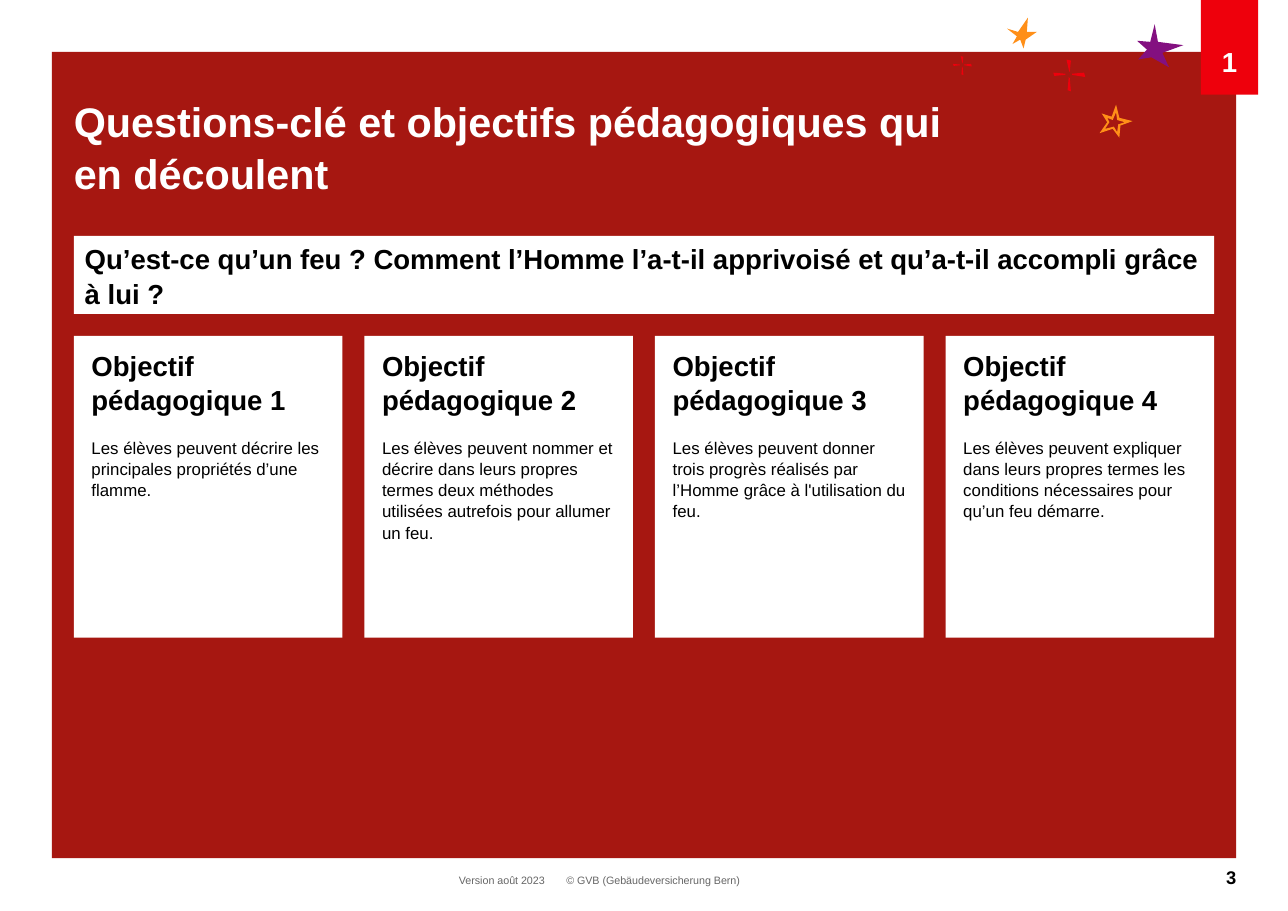
from dataclasses import dataclass

import pptx
import pptx.dml.color
import pptx.enum.shapes
import pptx.enum.text
import pptx.slide
import pptx.util

Align = pptx.enum.text.PP_ALIGN
Anchor = pptx.enum.text.MSO_ANCHOR
Points = list[tuple[float, float]]

# The page is a grid of square cells; every length below counts cells.
COLUMNS, ROWS = 1169, 827
CELL = pptx.util.Inches(0.01)


@dataclass(frozen=True)
class Theme:
    font: str = "Arial"
    frame: str = "A61711"
    red: str = "EE000C"
    purple: str = "831080"
    orange: str = "FF8F18"
    white: str = "FFFFFF"
    black: str = "000000"
    grey: str = "666666"
    title: int = 27
    heading: int = 18
    number: int = 12
    body: int = 11
    footer: int = 7
    heading_gap: float = 13.2
    line_spacing: float = 1.05


THEME = Theme()


@dataclass(frozen=True)
class Area:
    left: float
    top: float
    width: float
    height: float


@dataclass(frozen=True)
class Block:
    """A text area, filled if it has a fill; insets are left, top, right, bottom."""
    area: Area
    texts: tuple[str, ...]
    sizes: tuple[int, ...]
    color: str
    fill: str | None = None
    bold: bool = True
    align: Align = Align.LEFT
    anchor: Anchor = Anchor.TOP
    insets: tuple[int, int, int, int] = (0, 0, 0, 0)
    wrap: bool = True


@dataclass(frozen=True)
class Star:
    color: str
    contours: tuple[Points, ...]


@dataclass(frozen=True)
class Spark:
    column: float
    row: float
    scale: float


FRAME = Area(47, 47, 1075, 732)
CONTENT_LEFT, CONTENT_WIDTH = 67, 1035
CARD_TOP, CARD_HEIGHT, CARD_GAP = 305, 274, 20

OBJECTIVES = (
    "Les élèves peuvent décrire les principales propriétés d’une flamme.",
    "Les élèves peuvent nommer et décrire dans leurs propres termes deux méthodes "
    "utilisées autrefois pour allumer un feu.",
    "Les élèves peuvent donner trois progrès réalisés par l’Homme grâce à "
    "l'utilisation du feu.",
    "Les élèves peuvent expliquer dans leurs propres termes les conditions "
    "nécessaires pour qu’un feu démarre.",
)
CARD_WIDTH = (CONTENT_WIDTH - CARD_GAP * (len(OBJECTIVES) - 1)) / len(OBJECTIVES)

BLOCKS = (
    Block(Area(514, 793, 162, 12), ("© GVB (Gebäudeversicherung Bern)",),
          (THEME.footer,), THEME.grey, bold=False, wrap=False),
    Block(Area(413, 793, 85, 13), ("Version août 2023",), (THEME.footer,),
          THEME.grey, bold=False, align=Align.CENTER, wrap=False),
    Block(Area(1051, 785, 71, 17), ("3",), (THEME.number,), THEME.black,
          align=Align.RIGHT),
    Block(Area(1090, 0, 52, 86), ("1",), (THEME.heading,), THEME.white,
          fill=THEME.red, align=Align.CENTER, anchor=Anchor.BOTTOM,
          insets=(0, 40, 0, 15)),
    Block(Area(CONTENT_LEFT, 85, 807, 92),
          ("Questions-clé et objectifs pédagogiques qui en découlent",),
          (THEME.title,), THEME.white),
    Block(Area(CONTENT_LEFT, 214, CONTENT_WIDTH, 71),
          ("Qu’est-ce qu’un feu ? Comment l’Homme l’a-t-il apprivoisé et "
           "qu’a-t-il accompli grâce à lui ?",),
          (THEME.heading,), THEME.black, fill=THEME.white, anchor=Anchor.MIDDLE,
          insets=(10, 5, 10, 5)),
)

STARS = (
    Star(THEME.purple, ([
        (1044, 38), (1032, 37), (1041, 45), (1033, 54), (1045, 52), (1061, 61),
        (1055, 48), (1074, 41), (1051, 38), (1048, 22)],)),
    Star(THEME.orange, ([
        (919, 40), (926, 36), (929, 44), (931, 36), (941, 29), (932, 29),
        (933, 16), (924, 29), (914, 26), (923, 33)],)),
    Star(THEME.orange, (
        [(1016, 125), (1010, 117), (998, 121), (1005, 111), (1000, 103),
         (1009, 106), (1013, 95), (1016, 107), (1028, 110), (1017, 114)],
        [(1011, 115), (1014, 120), (1015, 113), (1021, 111), (1014, 109),
         (1013, 102), (1010, 109), (1005, 107), (1007, 111), (1003, 117)])),
)

SPARKS = (Spark(970.5, 68.5, 1), Spark(873.5, 59.5, 0.59))
SPARK_ARMS: tuple[Points, ...] = (
    [(0, -3.5), (-2.5, -14.5), (1.5, -13.5), (0.5, -3.5)],
    [(0.5, 2.5), (1.5, 14.5), (-1.5, 13.5), (-0.5, 1.5)],
    [(2.5, -1.5), (13.5, -2.5), (14.5, 1.5), (2.5, -0.5)],
    [(-3.5, -0.5), (-13.5, 0.5), (-14.5, -2.5), (-3.5, -1.5)],
)


def cells(count: float) -> int:
    return round(count * CELL)


def rgb(color: str) -> pptx.dml.color.RGBColor:
    return pptx.dml.color.RGBColor.from_string(color)


def paint(shape, color: str) -> None:
    shape.shadow.inherit = False
    shape.fill.solid()
    shape.fill.fore_color.rgb = rgb(color)
    shape.line.fill.background()


def add_area(page: pptx.slide.Slide, area: Area, fill: str | None):
    """Add a filled rectangle, or a text box when there is no fill."""
    place = [cells(n) for n in (area.left, area.top, area.width, area.height)]
    if fill is None:
        return page.shapes.add_textbox(*place)
    box = page.shapes.add_shape(pptx.enum.shapes.MSO_SHAPE.RECTANGLE, *place)
    paint(box, fill)
    return box


def add_outline(page: pptx.slide.Slide, contours: tuple[Points, ...], color: str) -> None:
    """Fill the contours as one shape; a contour inside another is a hole."""
    scaled = [[(cells(x), cells(y)) for x, y in points] for points in contours]
    builder = page.shapes.build_freeform(*scaled[0][0], scale=1.0)
    for index, points in enumerate(scaled):
        if index:
            builder.move_to(*points[0])
        builder.add_line_segments(points[1:], close=True)
    paint(builder.convert_to_shape(), color)


def add_spark(page: pptx.slide.Slide, spark: Spark) -> None:
    for arm in SPARK_ARMS:
        points = [(spark.column + x * spark.scale, spark.row + y * spark.scale)
                  for x, y in arm]
        add_outline(page, (points,), THEME.red)


def add_block(page: pptx.slide.Slide, block: Block) -> None:
    """Only the first paragraph is bold; the next ones are plain text."""
    frame = add_area(page, block.area, block.fill).text_frame
    frame.word_wrap = block.wrap
    frame.vertical_anchor = block.anchor
    (frame.margin_left, frame.margin_top,
     frame.margin_right, frame.margin_bottom) = map(cells, block.insets)
    frame.text = "\n".join(block.texts)
    for index, (para, size) in enumerate(zip(frame.paragraphs, block.sizes)):
        para.alignment = block.align
        para.line_spacing = THEME.line_spacing
        if index:
            para.space_before = pptx.util.Pt(THEME.heading_gap)
        for span in para.runs:
            span.font.name = THEME.font
            span.font.size = pptx.util.Pt(size)
            span.font.bold = block.bold and index == 0
            span.font.color.rgb = rgb(block.color)


def objective_card(index: int, objective: str) -> Block:
    left = CONTENT_LEFT + index * (CARD_WIDTH + CARD_GAP)
    return Block(Area(left, CARD_TOP, CARD_WIDTH, CARD_HEIGHT),
                 (f"Objectif pédagogique {index + 1}", objective),
                 (THEME.heading, THEME.body), THEME.black, fill=THEME.white,
                 insets=(16, 10, 16, 10))


def main() -> None:
    deck = pptx.Presentation()
    deck.slide_width, deck.slide_height = cells(COLUMNS), cells(ROWS)
    page = deck.slides.add_slide(deck.slide_layouts[6])
    add_area(page, FRAME, THEME.frame)
    for star in STARS:
        add_outline(page, star.contours, star.color)
    for spark in SPARKS:
        add_spark(page, spark)
    for block in BLOCKS:
        add_block(page, block)
    for index, objective in enumerate(OBJECTIVES):
        add_block(page, objective_card(index, objective))
    deck.save("out.pptx")


if __name__ == "__main__":
    main()
